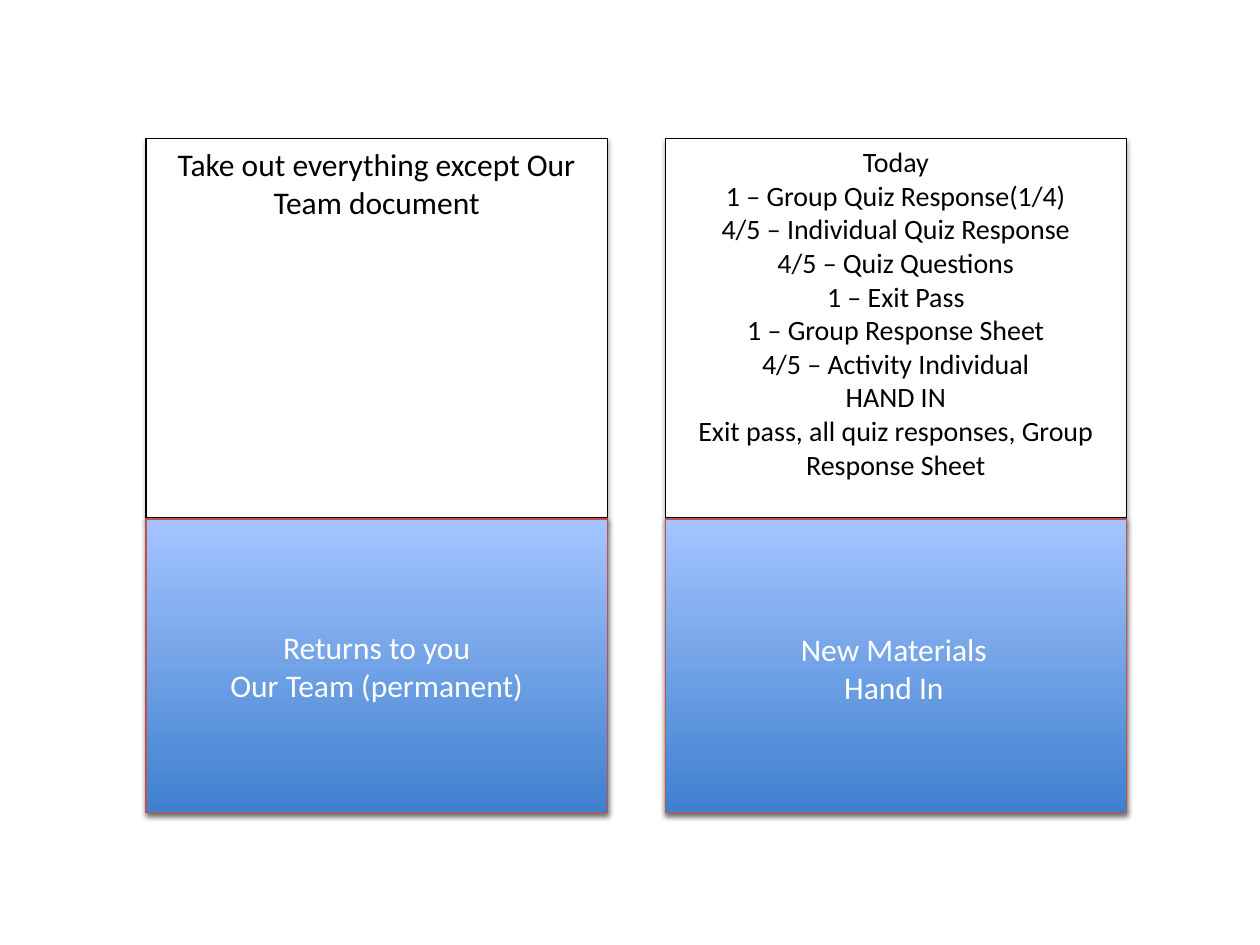
from lxml import etree
from pptx import Presentation
from pptx.dml.color import RGBColor
from pptx.enum.shapes import MSO_CONNECTOR, MSO_SHAPE
from pptx.enum.text import MSO_ANCHOR, MSO_AUTO_SIZE, PP_ALIGN
from pptx.oxml.ns import qn
from pptx.util import Inches, Pt

RECTANGLE = MSO_SHAPE.RECTANGLE
STRAIGHT = MSO_CONNECTOR.STRAIGHT
TOP, MIDDLE = MSO_ANCHOR.TOP, MSO_ANCHOR.MIDDLE
CENTER = PP_ALIGN.CENTER
FIT_SHAPE = MSO_AUTO_SIZE.SHAPE_TO_FIT_TEXT

COLORS = {
    "black": "000000",
    "white": "FFFFFF",
    "red": "C0504D",
    "deep_blue": "3F80CE",
    "light_blue": "A4C4FF",
}
FONT = "Calibri"

# Both folder panels share these measures, in inches
PANEL_TOP, PANEL_WIDTH, PANEL_HEIGHT = 1.1, 3.66, 5.35
POCKET_TOP, POCKET_HEIGHT = 4.12, 2.33
LEFT_PANEL, RIGHT_PANEL = 1.16, 5.28

TAKE_OUT = ["Take out everything except Our Team document"]
TODAY = [
    "Today",
    "1 – Group Quiz Response(1/4)",
    "4/5 – Individual Quiz Response",
    "4/5 – Quiz Questions",
    "1 – Exit Pass",
    "1 – Group Response Sheet",
    "4/5 – Activity Individual",
    "HAND IN",
    "Exit pass, all quiz responses, Group Response Sheet",
]
RETURNS = ["Returns to you", "Our Team (permanent)"]
NEW_MATERIALS = ["New Materials", "Hand In"]


def rgb(name):
    return RGBColor.from_string(COLORS[name])


def add_shadow(effects, distance, opacity):
    """Put a soft downward shadow into an effect list."""
    shadow = etree.SubElement(
        effects, qn("a:outerShdw"), blurRad=str(Pt(3.1)), dist=str(Pt(distance)),
        dir="5400000", rotWithShape="0")
    color = etree.SubElement(shadow, qn("a:srgbClr"), val=COLORS["black"])
    etree.SubElement(color, qn("a:alpha"), val=str(opacity * 1000))


def write_text(box, lines, size, color, anchor=TOP):
    frame = box.text_frame
    frame.word_wrap = True
    frame.vertical_anchor = anchor
    frame.text = "\n".join(lines)
    for para in frame.paragraphs:
        para.alignment = CENTER
        para.font.name = FONT
        para.font.size = Pt(size)
        para.font.color.rgb = rgb(color)


def add_box(page, left, top, height, line_color):
    box = page.shapes.add_shape(
        RECTANGLE, Inches(left), Inches(top), Inches(PANEL_WIDTH), Inches(height))
    box.line.color.rgb = rgb(line_color)
    box.line.width = Pt(0.75)
    box.shadow.inherit = False
    add_shadow(box._element.spPr.find(qn("a:effectLst")), 1.8, 35)
    return box


def add_sheet(page, left, lines, size):
    sheet = add_box(page, left, PANEL_TOP, PANEL_HEIGHT, "black")
    sheet.fill.solid()
    sheet.fill.fore_color.rgb = rgb("white")
    write_text(sheet, lines, size, "black")


def add_divider(page, left):
    divider = page.shapes.add_connector(
        STRAIGHT, Inches(left), Inches(POCKET_TOP),
        Inches(left + PANEL_WIDTH), Inches(POCKET_TOP))
    divider.line.color.rgb = rgb("black")
    divider.line.width = Pt(2)
    effects = etree.SubElement(divider._element.spPr, qn("a:effectLst"))
    add_shadow(effects, 1.6, 38)


def add_pocket(page, left):
    pocket = add_box(page, left, POCKET_TOP, POCKET_HEIGHT, "red")
    pocket.fill.gradient()
    pocket.fill.gradient_angle = 90
    for stop, color in zip(pocket.fill.gradient_stops, ("deep_blue", "light_blue")):
        stop.color.rgb = rgb(color)
    return pocket


def add_folder_side(page, left, lines, size):
    add_sheet(page, left, lines, size)
    add_divider(page, left)
    return add_pocket(page, left)


def main():
    deck = Presentation()
    deck.slide_width, deck.slide_height = Inches(10), Inches(7.5)
    page = deck.slides.add_slide(deck.slide_layouts[6])

    # Left side of the folder
    pocket = add_folder_side(page, LEFT_PANEL, TAKE_OUT, 18)
    write_text(pocket, RETURNS, 18, "white", MIDDLE)

    # Right side of the folder, with its pocket label in a text box
    add_folder_side(page, RIGHT_PANEL, TODAY, 16)
    label = page.shapes.add_textbox(
        Inches(5.48), Inches(4.95), Inches(3.23), Inches(0.71))
    write_text(label, NEW_MATERIALS, 18, "white")
    label.text_frame.auto_size = FIT_SHAPE

    deck.save("out.pptx")


if __name__ == "__main__":
    main()
